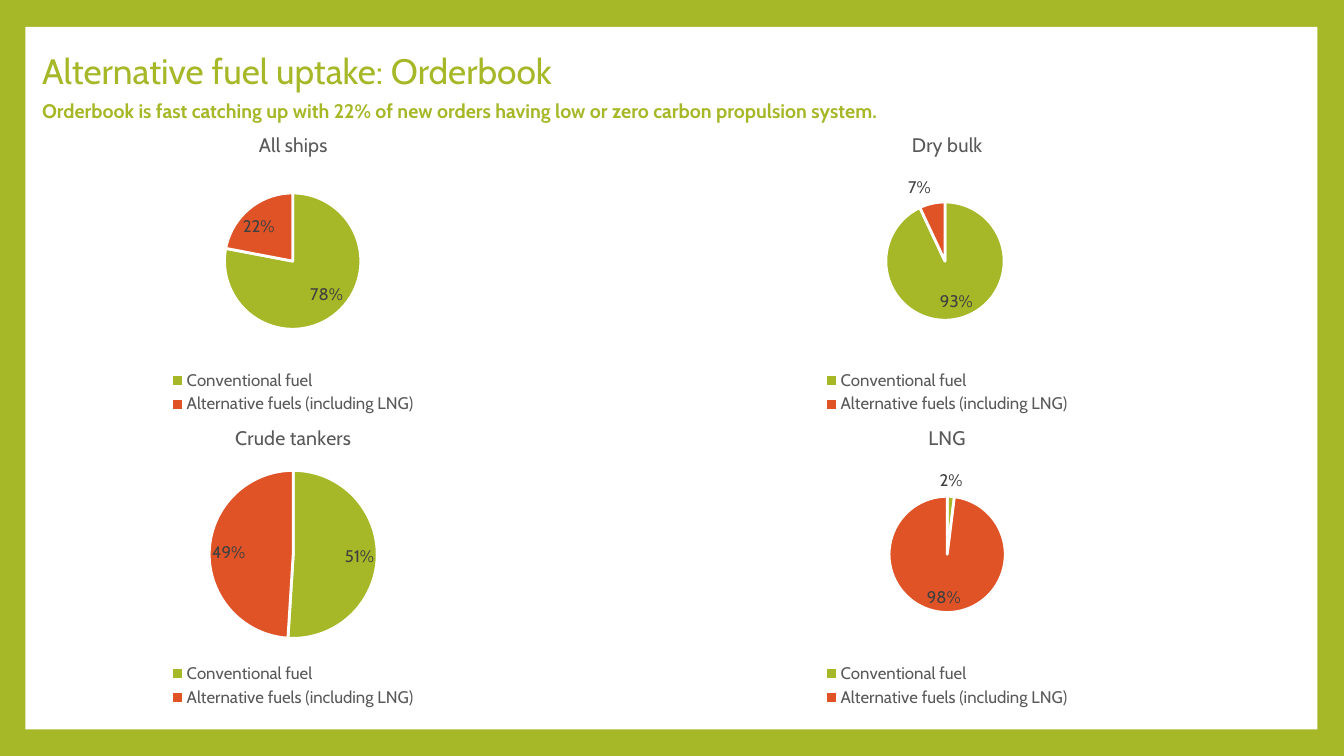
from pptx import Presentation
from pptx.chart.data import CategoryChartData
from pptx.dml.color import RGBColor
from pptx.enum.chart import XL_CHART_TYPE, XL_LABEL_POSITION, XL_LEGEND_POSITION
from pptx.enum.shapes import MSO_SHAPE
from pptx.enum.text import MSO_ANCHOR, PP_ALIGN
from pptx.util import Cm, Pt

GREEN = RGBColor(0xA6, 0xB7, 0x27)
ORANGE = RGBColor(0xDF, 0x53, 0x27)
WHITE = RGBColor(0xFF, 0xFF, 0xFF)
BLACK = RGBColor(0x00, 0x00, 0x00)
TITLE_GREY = RGBColor(0x59, 0x59, 0x59)
LABEL_GREY = RGBColor(0x40, 0x40, 0x40)
FONT_NAME = "Cabin"

FUELS = ("Conventional fuel", "Alternative fuels (including LNG)")
FUEL_COLORS = (GREEN, ORANGE)
SHIP_TYPES = (
    ("All ships", (78, 22)),
    ("Dry bulk", (93, 7)),
    ("Crude tankers", (51, 49)),
    ("LNG", (2, 98)),
)


def format_font(font, size, color, bold=False):
    values = {"name": FONT_NAME, "size": Pt(size), "bold": bold}
    for name, value in values.items():
        setattr(font, name, value)
    font.color.rgb = color


def add_frame(slide, left, top, width, height):
    """Green background with a white panel on it."""
    slide.background.fill.solid()
    slide.background.fill.fore_color.rgb = GREEN
    panel = slide.shapes.add_shape(MSO_SHAPE.RECTANGLE, left, top, width, height)
    panel.shadow.inherit = False
    panel.fill.solid()
    panel.fill.fore_color.rgb = WHITE
    panel.line.fill.background()
    # Keep the panel behind the title
    tree = slide.shapes._spTree
    tree.remove(panel._element)
    tree.insert(2, panel._element)


def fill_text(shape, text, size, anchor, alignment, bold=False):
    frame = shape.text_frame
    frame.word_wrap = True
    frame.vertical_anchor = anchor
    paragraph = frame.paragraphs[0]
    paragraph.alignment = alignment
    run = paragraph.add_run()
    run.text = text
    format_font(run.font, size, GREEN, bold)


def add_heading(slide, left, top):
    """Title and the subtitle below it."""
    title = slide.shapes.title
    box = {"left": left, "top": top, "width": Cm(21), "height": Cm(1.2)}
    for name, value in box.items():
        setattr(title, name, value)
    fill_text(title, "Alternative fuel uptake: Orderbook", 25.2,
              MSO_ANCHOR.TOP, PP_ALIGN.LEFT)
    subtitle = slide.shapes.add_textbox(left, top + Cm(0.61), Cm(29.4), Cm(2.13))
    fill_text(subtitle,
              "Orderbook is fast catching up with 22% of new orders "
              "having low or zero carbon propulsion system.",
              14, MSO_ANCHOR.MIDDLE, PP_ALIGN.JUSTIFY, bold=True)


def add_pie(slide, left, top, width, height, ship_type, shares):
    data = CategoryChartData()
    data.categories = FUELS
    data.add_series(ship_type, shares)
    chart = slide.shapes.add_chart(
        XL_CHART_TYPE.PIE, left, top, width, height, data).chart
    format_font(chart.font, 10, BLACK)

    # Title
    title_paragraph = chart.chart_title.text_frame.paragraphs[0]
    run = title_paragraph.add_run()
    run.text = ship_type
    format_font(run.font, 14, TITLE_GREY)

    # Legend
    chart.has_legend = True
    chart.legend.position = XL_LEGEND_POSITION.BOTTOM
    chart.legend.include_in_layout = False
    format_font(chart.legend.font, 12, TITLE_GREY)

    # Slices
    plot = chart.plots[0]
    plot.vary_by_categories = True
    series = plot.series[0]
    for index, color in enumerate(FUEL_COLORS):
        slice_format = series.points[index].format
        slice_format.fill.solid()
        slice_format.fill.fore_color.rgb = color
        slice_format.line.color.rgb = WHITE
        slice_format.line.width = Pt(2)

    # Percentages
    labels = series.data_labels
    label_values = {
        "show_percentage": True,
        "show_value": False,
        "number_format": "0%",
        "number_format_is_linked": False,
        "position": XL_LABEL_POSITION.BEST_FIT,
    }
    for name, value in label_values.items():
        setattr(labels, name, value)
    format_font(labels.font, 12, LABEL_GREY)


def add_pie_grid(slide, left, top, column_step, row_step):
    """Two by two pies, one for each ship type."""
    for index, (ship_type, shares) in enumerate(SHIP_TYPES):
        row, column = divmod(index, 2)
        add_pie(slide, left + column * column_step, top + row * row_step,
                Cm(12.7), Cm(7.62), ship_type, shares)


def main():
    presentation = Presentation()
    presentation.slide_width = Cm(33.87)
    presentation.slide_height = Cm(19.05)
    slide = presentation.slides.add_slide(presentation.slide_layouts[5])
    add_frame(slide, Cm(0.64), Cm(0.68), Cm(32.56), Cm(17.7))
    add_heading(slide, Cm(0.81), Cm(1.11))
    add_pie_grid(slide, Cm(1.04), Cm(2.92), Cm(16.48), Cm(7.39))
    presentation.save("out.pptx")


if __name__ == "__main__":
    main()
